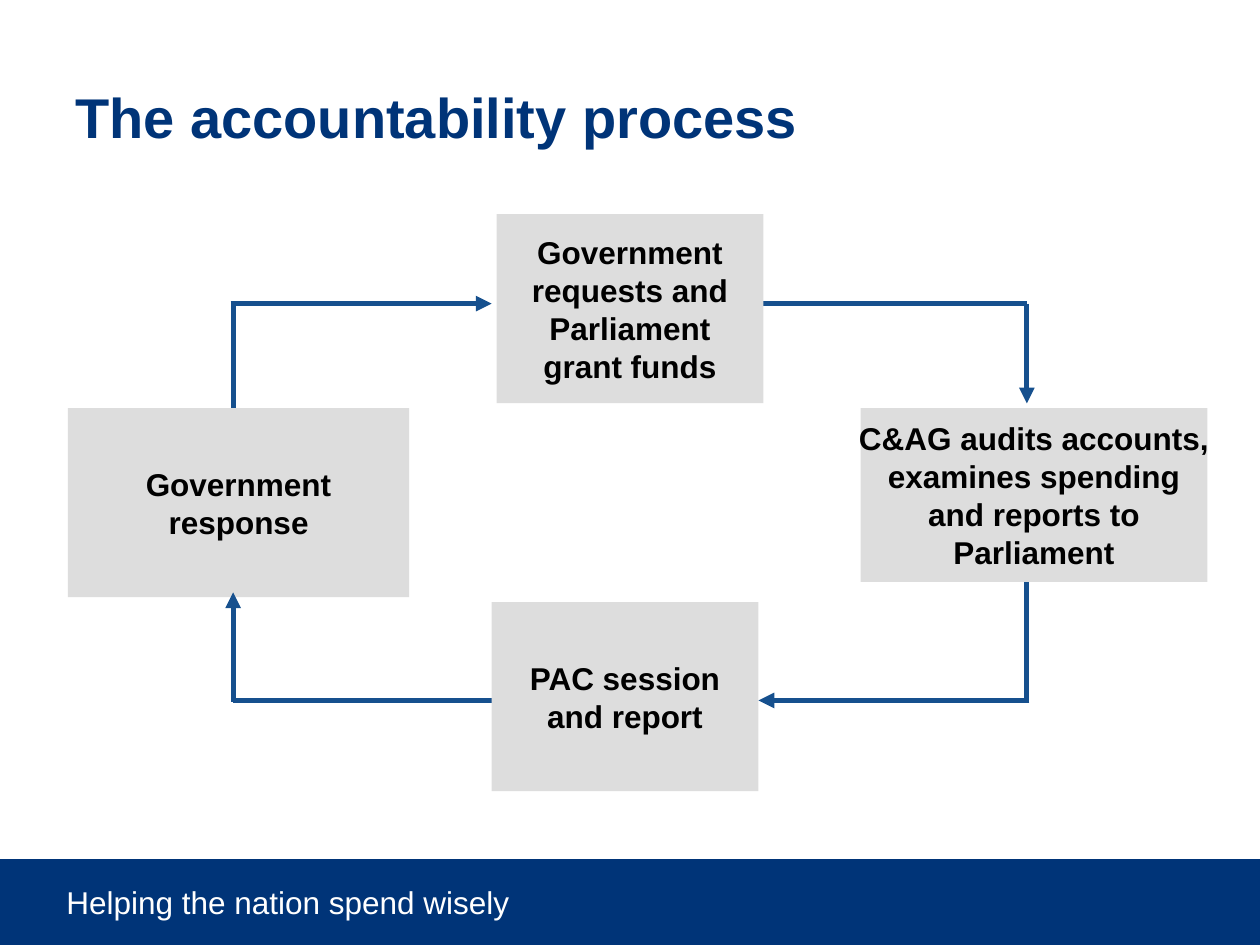
from lxml.etree import SubElement
from pptx import Presentation
from pptx.dml.color import RGBColor
from pptx.enum.shapes import MSO_CONNECTOR, MSO_SHAPE
from pptx.enum.text import MSO_ANCHOR, PP_ALIGN
from pptx.oxml.ns import qn
from pptx.util import Cm, Pt

NAVY = RGBColor(0x00, 0x34, 0x78)
BLUE = RGBColor(0x16, 0x50, 0x8E)
GREY = RGBColor(0xDD, 0xDD, 0xDD)
BLACK = RGBColor(0, 0, 0)
WHITE = RGBColor(255, 255, 255)


def add_text(left, top, width, height, text, size=18, color=BLACK, bold=True,
             align=PP_ALIGN.LEFT, anchor=MSO_ANCHOR.MIDDLE, wrap=True, fill=None):
    """Add a text box, or a filled rectangle; \\n starts a paragraph, \\v a line."""
    place = Cm(left), Cm(top), Cm(width), Cm(height)
    if fill is None:
        box = page.shapes.add_textbox(*place)
    else:
        box = page.shapes.add_shape(MSO_SHAPE.RECTANGLE, *place)
        box.shadow.inherit = False
        box.fill.solid()
        box.fill.fore_color.rgb = fill
        box.line.fill.background()
    frame = box.text_frame
    frame.word_wrap = wrap
    frame.vertical_anchor = anchor
    frame.text = text
    for para in frame.paragraphs:
        para.alignment = align
        para.font.name = "Arial"
        para.font.size = Pt(size)
        para.font.bold = bold
        para.font.color.rgb = color


def add_line(start, end, arrow=False):
    points = [Cm(value) for value in (*start, *end)]
    line = page.shapes.add_connector(MSO_CONNECTOR.STRAIGHT, *points)
    line.line.color.rgb = BLUE
    line.line.width = Pt(3)
    if arrow:
        SubElement(line.line._get_or_add_ln(), qn("a:tailEnd"), type="triangle")
    SubElement(line._element.spPr, qn("a:effectLst"))


deck = Presentation()
deck.slide_width, deck.slide_height = Cm(25.4), Cm(19.05)
page = deck.slides.add_slide(deck.slide_layouts[6])

# Footer band and title
add_text(0, 17.32, 25.4, 1.73, "", fill=NAVY)
add_text(1.09, 17.68, 19.8, 1.02, "Helping the nation spend wisely",
         color=WHITE, bold=False, anchor=MSO_ANCHOR.TOP)
add_text(1.27, 0.76, 22.83, 3.18, "The accountability process", size=32, color=NAVY)

# Corners of the cycle
LEFT, RIGHT, TOP, BOTTOM = 4.7, 20.7, 6.12, 14.12

# The plain half of each link runs behind the boxes
for start, end in [
    ((LEFT, 8.33), (LEFT, TOP)),
    ((15.29, TOP), (RIGHT, TOP)),
    ((RIGHT, 11.61), (RIGHT, BOTTOM)),
    ((9.91, BOTTOM), (LEFT, BOTTOM)),
]:
    add_line(start, end)

for left, top, width, height, wrap, step in [
    (10.01, 4.32, 5.38, 3.81, True,
     "Government\vrequests and\vParliament\vgrant funds"),
    (17.35, 8.23, 6.99, 3.5, False,
     "C&AG audits accounts,\nexamines spending\nand reports to\vParliament"),
    (9.91, 12.14, 5.38, 3.81, False, "PAC session\vand report"),
    (1.37, 8.23, 6.88, 3.81, False, "Government\vresponse"),
]:
    add_text(left, top, width, height, step, align=PP_ALIGN.CENTER,
             wrap=wrap, fill=GREY)

# The arrow half of each link overlaps its corner slightly
for start, end in [
    ((LEFT - 0.05, TOP), (9.91, TOP)),
    ((RIGHT, TOP), (RIGHT, 8.13)),
    ((RIGHT + 0.05, BOTTOM), (15.29, BOTTOM)),
    ((LEFT, BOTTOM + 0.03), (LEFT, 11.94)),
]:
    add_line(start, end, arrow=True)

deck.save("out.pptx")
